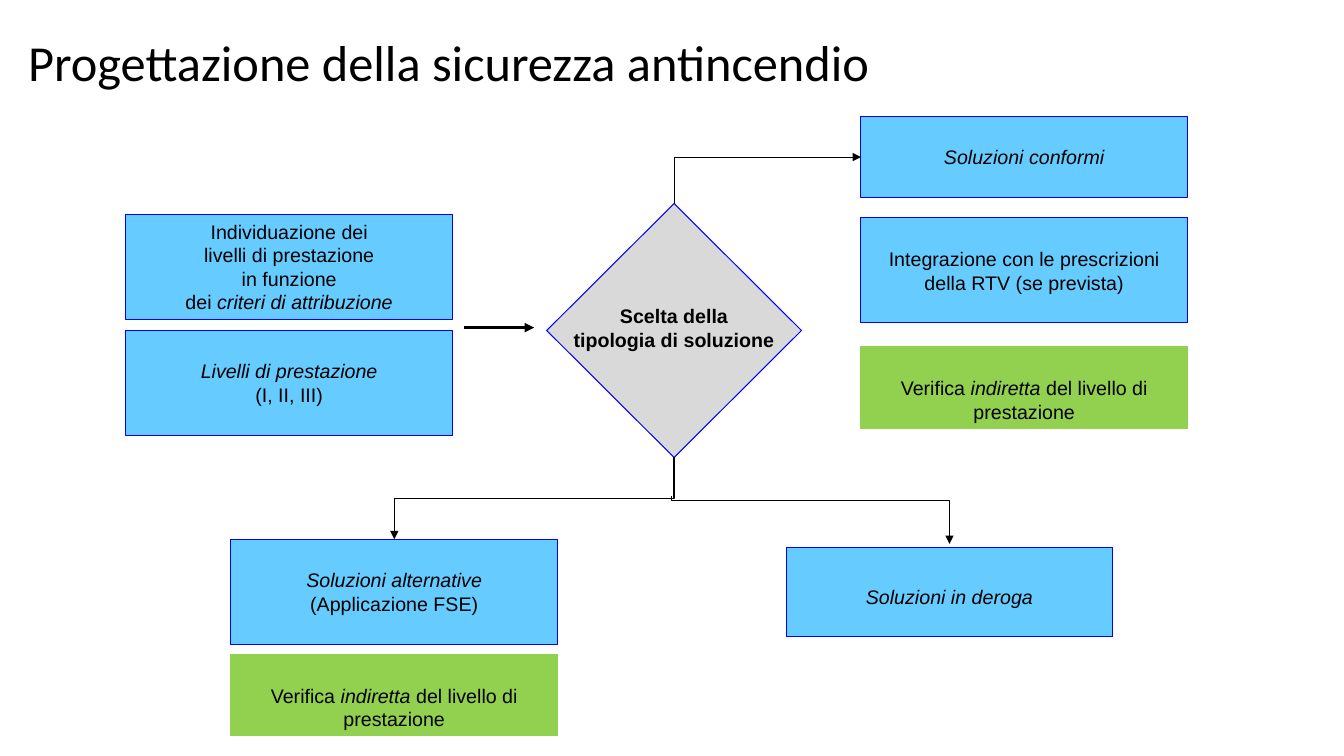
from lxml.etree import SubElement
from pptx import Presentation
from pptx.dml.color import RGBColor
from pptx.enum.shapes import MSO_CONNECTOR as CONN, MSO_SHAPE as SHAPE
from pptx.enum.text import MSO_ANCHOR as ANCHOR, PP_ALIGN as ALIGN
from pptx.oxml.ns import qn
from pptx.util import Pt

COLORS = {
    "step": "66CCFF", "check": "92D050", "choice": "D9D9D9",
    "border": "0000FF", "ink": "000000",
}
BOX_W = 233.3
LEFT_X, ALT_X, DEROGA_X, RIGHT_X = 90, 165, 561.6, 615
TALL, LOW = 75, 58.3
MID_X = 481.5
DIAMOND_Y, DIAMOND_W, DIAMOND_H = 145.4, 182, 181.4


class Diagram:
    def __init__(self, slide, font="Arial", size=14):
        self.s, self.font, self.size = slide, font, size

    def color(self, name):
        return RGBColor.from_string(COLORS[name])

    def add_text(self, sp, paragraphs, align=ALIGN.CENTER, bold=False, size=None,
                 font=None, drop=0):
        """Fill sp with paragraphs of (text, italic) runs, moved down by drop."""
        tf = sp.text_frame
        tf.word_wrap = True
        tf.vertical_anchor = ANCHOR.MIDDLE
        tf.margin_top = Pt(3.6 + 2 * drop)
        for i, runs in enumerate(paragraphs):
            p = tf.paragraphs[0] if i == 0 else tf.add_paragraph()
            p.alignment = align
            for text, italic in runs:
                r = p.add_run()
                r.text = text
                r.font.name = font or self.font
                r.font.size = Pt(size or self.size)
                r.font.bold, r.font.italic = bold, italic
                r.font.color.rgb = self.color("ink")

    def shape(self, kind, x, y, w, h, fill, border):
        sp = self.s.shapes.add_shape(kind, Pt(x), Pt(y), Pt(w), Pt(h))
        sp.shadow.inherit = False
        sp.fill.solid()
        sp.fill.fore_color.rgb = self.color(fill)
        sp.line.color.rgb = self.color(border)
        sp.line.width = Pt(0.75)
        return sp

    def step(self, x, y, h, paragraphs, drop=0):
        sp = self.shape(SHAPE.RECTANGLE, x, y, BOX_W, h, "step", "border")
        self.add_text(sp, paragraphs, drop=drop)

    def check(self, x, y):
        sp = self.shape(SHAPE.RECTANGLE, x, y, BOX_W, LOW, "check", "check")
        self.add_text(sp, [[("Verifica ", False), ("indiretta", True),
                            (" del livello di prestazione", False)]], drop=8.5)

    def label(self, x, y, w, h, paragraphs, **style):
        sp = self.s.shapes.add_textbox(Pt(x), Pt(y), Pt(w), Pt(h))
        self.add_text(sp, paragraphs, **style)

    def arrow(self, x1, y1, x2, y2, width=0.75, kind=CONN.STRAIGHT):
        c = self.s.shapes.add_connector(kind, Pt(x1), Pt(y1), Pt(x2), Pt(y2))
        c.line.color.rgb = self.color("ink")
        c.line.width = Pt(width)
        spPr = c._element.spPr
        SubElement(spPr.find(qn("a:ln")), qn("a:tailEnd"), type="triangle")
        SubElement(spPr, qn("a:effectLst"))
        return c

    def elbow(self, x1, y1, x2, y2, width=0.75, preset="bentConnector3", bend=None):
        """Draw an elbow that leaves its start vertically: a quarter-turned connector."""
        cx, cy = (x1 + x2) / 2, (y1 + y2) / 2
        dx, dy = (x2 - x1) / 2, (y2 - y1) / 2
        c = self.arrow(cx - dy, cy + dx, cx + dy, cy - dx, width, CONN.ELBOW)
        spPr = c._element.spPr
        spPr.find(qn("a:xfrm")).set("rot", str(90 * 60000))
        geom = spPr.find(qn("a:prstGeom"))
        geom.set("prst", preset)
        if bend is not None:
            guides = geom.find(qn("a:avLst"))
            if guides is None:
                guides = SubElement(geom, qn("a:avLst"))
            SubElement(guides, qn("a:gd"), name="adj1", fmla=f"val {round(bend * 100000)}")


def main():
    prs = Presentation()
    prs.slide_width, prs.slide_height = Pt(960), Pt(540)
    d = Diagram(prs.slides.add_slide(prs.slide_layouts[6]))

    d.label(13, 0, 937, 87, [[("Progettazione della sicurezza antincendio", False)]],
            align=ALIGN.LEFT, size=36, font="Calibri")

    d.step(LEFT_X, 153, TALL, [
        [("Individuazione dei", False)],
        [("livelli di prestazione", False)],
        [("in funzione", False)],
        [("dei ", False), ("criteri di attribuzione", True)],
    ])
    d.step(LEFT_X, 236, TALL, [[("Livelli di prestazione", True)],
                               [("(I, II, III)", False)]])
    d.step(RIGHT_X, 83, LOW, [[("Soluzioni conformi", True)]])
    d.step(RIGHT_X, 155.7, TALL,
           [[("Integrazione con le prescrizioni della RTV (se prevista)", False)]])
    d.step(ALT_X, 385.2, TALL, [[("Soluzioni alternative", True)],
                                [("(Applicazione FSE)", False)]])
    d.step(DEROGA_X, 391, 64, [[("Soluzioni in deroga", True)]], drop=3.5)
    for x, y in ((RIGHT_X, 247.7), (ALT_X, 467.3)):
        d.check(x, y)

    d.shape(SHAPE.DIAMOND, MID_X - DIAMOND_W / 2, DIAMOND_Y, DIAMOND_W, DIAMOND_H,
            "choice", "border")
    d.label(MID_X - 115, 213.5, 230, 41,
            [[("Scelta della", False)], [("tipologia di soluzione", False)]], bold=True)

    bottom = DIAMOND_Y + DIAMOND_H
    d.elbow(MID_X, DIAMOND_Y, RIGHT_X, 112.2, preset="bentConnector2")
    d.elbow(MID_X, bottom, ALT_X + BOX_W / 2, 385.2, width=1, bend=0.5)
    d.elbow(MID_X - 2, 354.5, DEROGA_X + BOX_W / 2, 388.5, bend=0.09)
    d.arrow(331.5, 234, 381.5, 234, width=2.25)

    prs.save("out.pptx")


if __name__ == "__main__":
    main()
